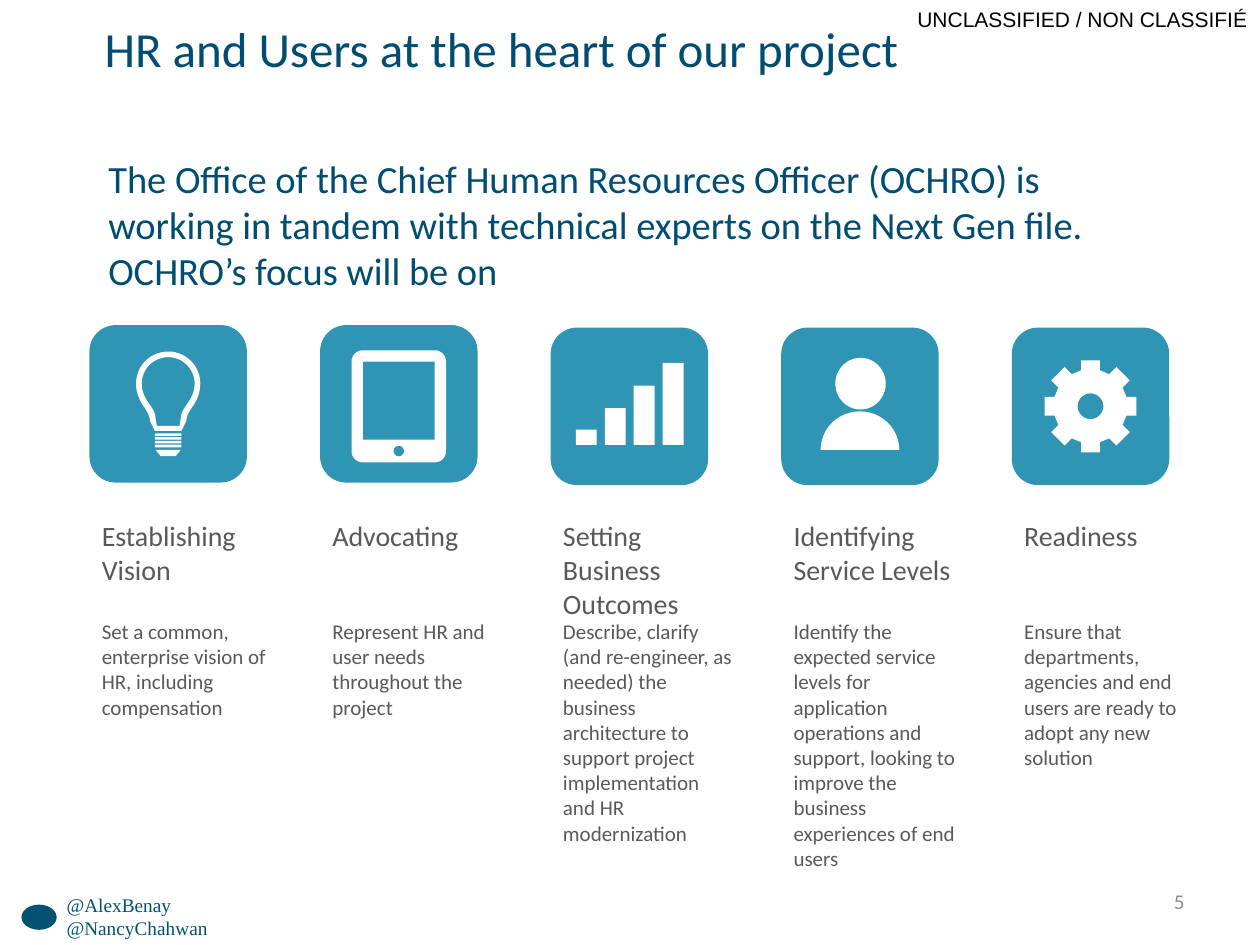
from math import cos, sin, radians
from pptx import Presentation
from pptx.dml.color import RGBColor
from pptx.enum.shapes import MSO_SHAPE
from pptx.enum.text import MSO_ANCHOR, PP_ALIGN
from pptx.util import Inches, Pt

NAVY = RGBColor(0x00, 0x4D, 0x71)
DEEP = RGBColor(0x00, 0x51, 0x72)
TEAL = RGBColor(0x30, 0x95, 0xB4)
GREY = RGBColor(0x59, 0x59, 0x59)
PALE = RGBColor(0x8C, 0x8C, 0x8C)
WHITE = RGBColor(0xFF, 0xFF, 0xFF)
BLACK = RGBColor(0x00, 0x00, 0x00)

COLS, ROWS = 100, 75
TILE, STEP, LEFT = 12.5, 18.3, 7.1
CARDS = [
    ("Establishing Vision", "Set a common, enterprise vision of HR, including compensation", 25.8),
    ("Advocating", "Represent HR and user needs throughout the project", 25.8),
    ("Setting Business Outcomes", "Describe, clarify (and re-engineer, as needed) the business "
     "architecture to support project implementation and HR modernization", 26),
    ("Identifying Service Levels", "Identify the expected service levels for application operations "
     "and support, looking to improve the business experiences of end users", 26),
    ("Readiness", "Ensure that departments, agencies and end users are ready to adopt any new solution", 26),
]


def arc(x, y, wide, high, start, end, steps=24):
    turns = [radians(start + (end - start) * i / steps) for i in range(steps + 1)]
    return [(x + wide * cos(t), y + high * sin(t)) for t in turns]


def curve(a, b, c, d, steps=16):
    def blend(t, k):
        u = 1 - t
        return u**3 * a[k] + 3 * u * u * t * b[k] + 3 * u * t * t * c[k] + t**3 * d[k]
    return [(blend(i / steps, 0), blend(i / steps, 1)) for i in range(steps + 1)]


def box(x, y, wide, high):
    return [(x, y), (x + wide, y), (x + wide, y + high), (x, y + high)]


def glass(size, dip, neck, base):
    top = -1.6
    half = arc(0, top, size, size, -90, 0)
    half += curve((size, top), (size, dip), (neck, dip + 0.5), (neck, dip + 1.4)) + [base]
    return half + [(-x, y) for x, y in reversed(half)]


def bulb():
    rings = [box(-1.05, 2.35 + 0.3 * i, 2.1, 0.2) for i in range(4)]
    return [glass(2.55, -0.05, 1.45, (1.05, 2.15)), glass(2.1, -0.25, 1, (0.9, 1.75)), *rings,
            [(-1, 3.65), (1, 3.65), (0.6, 4.15), (-0.6, 4.15)]]


def tablet():
    ends = [(2.85, 3.75), (-2.85, 3.75), (-2.85, -3.35), (2.85, -3.35)]
    rim = [p for i, (x, y) in enumerate(ends) for p in arc(x, y, 0.9, 0.9, 90 * i, 90 * i + 90, 8)]
    return [rim, box(-2.85, -3.35, 5.7, 6.2), arc(0, 3.75, 0.42, 0.42, 0, 360)]


def bars():
    tops = [1.85, 0.15, -1.65, -3.45]
    return [box(-4.25 + 2.3 * i, y, 1.65, 3.05 - y) for i, y in enumerate(tops)]


def bust():
    return [arc(0, 3.45, 3.12, 3.05, 180, 360)]


def gear():
    tooth = [(2.85, -0.75), (3.65, -0.75), (3.65, 0.75), (2.85, 0.75)]
    turns = [radians(45 * i) for i in range(8)]
    rim = [(x * cos(t) - y * sin(t), x * sin(t) + y * cos(t)) for t in turns for x, y in tooth]
    return [rim, arc(0, 0, 1.03, 1.03, 0, 360)]


class Deck:
    """Holds the style, the grid and the current slide."""

    def __init__(self):
        self.deck = Presentation()
        self.deck.slide_width, self.deck.slide_height = Inches(10), Inches(7.5)
        self.shapes = self.deck.slides.add_slide(self.deck.slide_layouts[6]).shapes
        self.font = "Calibri"

    def col(self, n):
        return round(self.deck.slide_width * n / COLS)

    def row(self, n):
        return round(self.deck.slide_height * n / ROWS)

    def area(self, x, y, wide, high):
        return self.col(x), self.row(y), self.col(wide), self.row(high)

    def paint(self, shape, color):
        shape.shadow.inherit = False
        shape.fill.solid()
        shape.fill.fore_color.rgb = color
        shape.line.fill.background()

    def text(self, area, lines, size, color, font=None, align=PP_ALIGN.LEFT, flush=False,
             anchor=MSO_ANCHOR.TOP):
        frame = self.shapes.add_textbox(*self.area(*area)).text_frame
        frame.word_wrap = True
        frame.vertical_anchor = anchor
        if flush:
            frame.margin_left = frame.margin_right = frame.margin_top = frame.margin_bottom = 0
        frame.text = lines
        for part in frame.paragraphs:
            part.alignment = align
            part.font.name = font or self.font
            part.font.size = Pt(size)
            part.font.color.rgb = color

    def shape(self, kind, area, color):
        item = self.shapes.add_shape(kind, *self.area(*area))
        self.paint(item, color)

    def icon(self, x, y, loops, color):
        loops = [[(self.col(x + a), self.row(y + b)) for a, b in loop] for loop in loops]
        pen = self.shapes.build_freeform(*loops[0][0])
        for i, loop in enumerate(loops):
            if i:
                pen.move_to(*loop[0])
            pen.add_line_segments(loop[1:], close=True)
        self.paint(pen.convert_to_shape(), color)

    def card(self, x, y, head, body, loops):
        self.shape(MSO_SHAPE.ROUNDED_RECTANGLE, (x, y, TILE, TILE), TEAL)
        self.icon(x + TILE / 2, y + TILE / 2, loops, WHITE)
        self.text((x, 40.7, 15.4, 6.4), head, 16, GREY)
        self.text((x, 48.6, 15.4, 21.2), body, 12, GREY)

    def save(self):
        self.deck.save("out.pptx")


def main():
    deck = Deck()
    deck.text((0, 0, 100, 3), "UNCLASSIFIED / NON CLASSIFIÉ", 12, BLACK, "Arial", PP_ALIGN.RIGHT)
    deck.shape(MSO_SHAPE.OVAL, (1.7, 71.8, 2.8, 2), DEEP)
    deck.text((4.3, 70.4, 24.3, 4.7), "@AlexBenay\n@NancyChahwan", 11, DEEP, "Times New Roman")
    deck.text((8.3, 1.5, 68.1, 9.6), "HR and Users at the heart of our project", 28, NAVY, flush=True)
    deck.text((8.6, 12.3, 82.8, 6.4), "The Office of the Chief Human Resources Officer (OCHRO) is working "
              "in tandem with technical experts on the Next Gen file. OCHRO’s focus will be on",
              22, NAVY, flush=True)
    icons = [bulb(), tablet(), bars(), bust(), gear()]
    for i, ((head, body, top), loops) in enumerate(zip(CARDS, icons)):
        deck.card(LEFT + STEP * i, top, head, body, loops)
    deck.shape(MSO_SHAPE.OVAL, (66.3, 28.4, 4, 4.1), WHITE)
    deck.text((71.7, 69.5, 23.3, 4), "5", 12, PALE, align=PP_ALIGN.RIGHT, anchor=MSO_ANCHOR.MIDDLE)
    deck.save()


if __name__ == "__main__":
    main()
